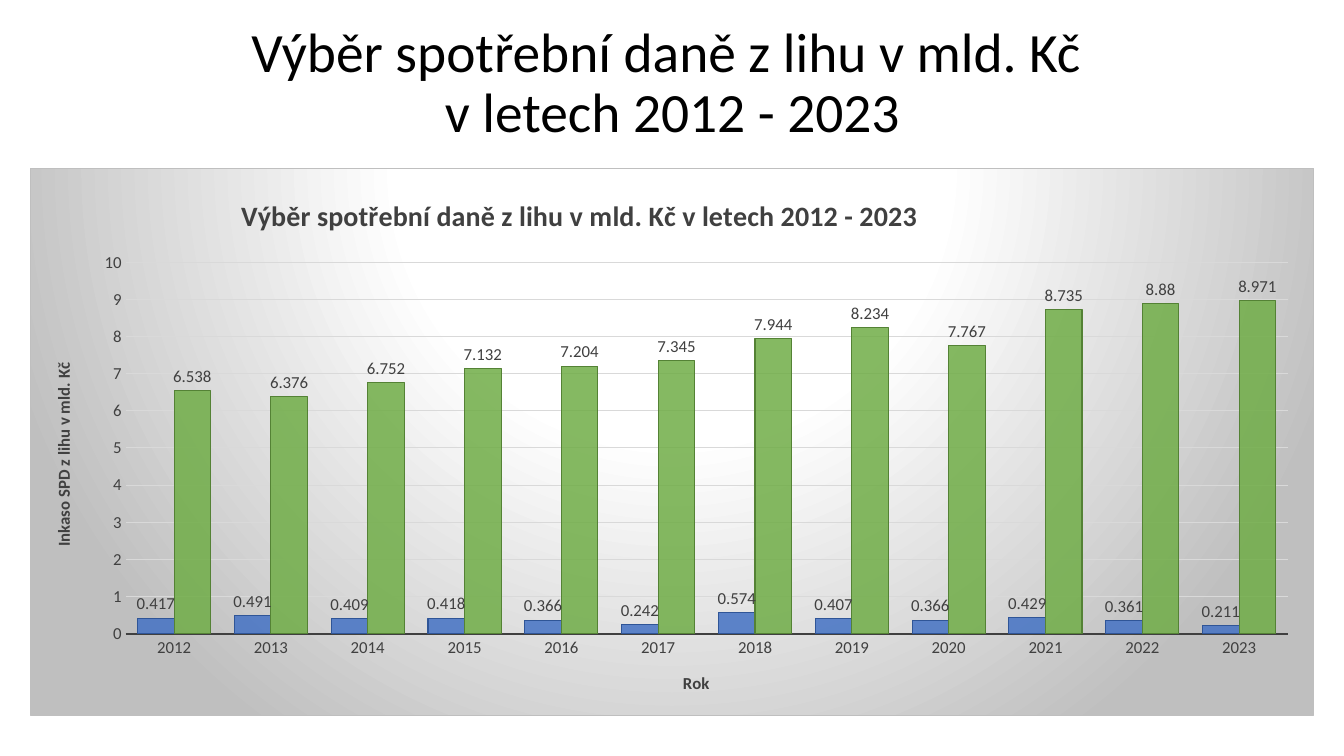
from dataclasses import dataclass

import pptx
import pptx.chart.data
import pptx.dml.color
import pptx.enum.chart
import pptx.enum.text
import pptx.oxml
import pptx.oxml.ns
import pptx.util
from pptx.util import Inches

RGBColor = pptx.dml.color.RGBColor
BLACK = RGBColor(0x00, 0x00, 0x00)
DARK_GRAY = RGBColor(0x40, 0x40, 0x40)
GRID_GRAY = RGBColor(0xD9, 0xD9, 0xD9)
BLUE = RGBColor(0x44, 0x72, 0xC4)
DARK_BLUE = RGBColor(0x2F, 0x55, 0x97)
GREEN = RGBColor(0x70, 0xAD, 0x47)
DARK_GREEN = RGBColor(0x54, 0x82, 0x35)
FONT = "Calibri"
YEARS = [str(year) for year in range(2012, 2024)]
HEADING_LINES = ("Výběr spotřební daně z lihu v mld. Kč ", "v letech 2012 - 2023")

CHART_FRAME = """
<c:spPr %s>
  <a:gradFill rotWithShape="1">
    <a:gsLst>
      <a:gs pos="0"><a:srgbClr val="FFFFFF"/></a:gs>
      <a:gs pos="39000"><a:srgbClr val="FFFFFF"/></a:gs>
      <a:gs pos="100000"><a:srgbClr val="BFBFBF"/></a:gs>
    </a:gsLst>
    <a:path path="circle"><a:fillToRect l="50000" t="-80000" r="50000" b="180000"/></a:path>
  </a:gradFill>
  <a:ln w="9525"><a:solidFill><a:srgbClr val="BFBFBF"/></a:solidFill></a:ln>
</c:spPr>""" % pptx.oxml.ns.nsdecls("c", "a")


@dataclass
class TaxSeries:
    name: str
    values: list[float]
    fill: RGBColor
    outline: RGBColor


TAX_SERIES = [
    TaxSeries("Series 1", [0.417, 0.491, 0.409, 0.418, 0.366, 0.242,
                           0.574, 0.407, 0.366, 0.429, 0.361, 0.211], BLUE, DARK_BLUE),
    TaxSeries("Series 2", [6.538, 6.376, 6.752, 7.132, 7.204, 7.345,
                           7.944, 8.234, 7.767, 8.735, 8.88, 8.971], GREEN, DARK_GREEN),
]


def style_font(font, size: float, color: RGBColor, bold: bool = False) -> None:
    font.name = FONT
    font.size = pptx.util.Pt(size)
    font.color.rgb = color
    font.bold = bold


def style_line(line, color: RGBColor, width: float) -> None:
    line.color.rgb = color
    line.width = pptx.util.Pt(width)


def write_chart_text(title, text: str, size: float) -> None:
    span = title.text_frame.paragraphs[0].add_run()
    span.text = text
    style_font(span.font, size, DARK_GRAY, bold=True)


def set_layout(element, index: int, target: str, **fractions: float) -> None:
    """Place a chart part by fractions of the chart's width and height."""
    for old_layout in element.findall(pptx.oxml.ns.qn("c:layout")):
        element.remove(old_layout)
    modes = '<c:xMode val="edge"/><c:yMode val="edge"/>'
    places = "".join(f'<c:{key} val="{value}"/>' for key, value in fractions.items())
    element.insert(index, pptx.oxml.parse_xml(
        f'<c:layout {pptx.oxml.ns.nsdecls("c")}><c:manualLayout>'
        f"{target}{modes}{places}</c:manualLayout></c:layout>"))


def style_series(series, tax: TaxSeries) -> None:
    series.invert_if_negative = False
    series.format.fill.solid()
    series.format.fill.fore_color.rgb = tax.fill
    for color in series._element.xpath("c:spPr/a:solidFill/a:srgbClr"):
        color.append(pptx.oxml.parse_xml(
            f'<a:alpha {pptx.oxml.ns.nsdecls("a")} val="85000"/>'))
    style_line(series.format.line, tax.outline, 0.75)
    labels = series.data_labels
    labels.show_value = True
    labels.position = pptx.enum.chart.XL_LABEL_POSITION.OUTSIDE_END
    style_font(labels.font, 12, DARK_GRAY)


def style_axis(axis, title: str) -> None:
    axis.major_tick_mark = pptx.enum.chart.XL_TICK_MARK.NONE
    axis.minor_tick_mark = pptx.enum.chart.XL_TICK_MARK.NONE
    style_font(axis.tick_labels.font, 12, DARK_GRAY)
    write_chart_text(axis.axis_title, title, 12)


def add_heading(page) -> None:
    heading = page.shapes.title
    heading.left, heading.top = Inches(0.92), Inches(0.4)
    heading.width, heading.height = Inches(11.5), Inches(0.88)
    frame = heading.text_frame
    frame.vertical_anchor = pptx.enum.text.MSO_ANCHOR.MIDDLE
    para = frame.paragraphs[0]
    para.alignment = pptx.enum.text.PP_ALIGN.CENTER
    para.line_spacing = 0.9
    for number, line in enumerate(HEADING_LINES):
        if number:
            para.add_line_break()
        span = para.add_run()
        span.text = line
        style_font(span.font, 39.6, BLACK)


def add_tax_chart(page) -> None:
    chart_data = pptx.chart.data.CategoryChartData()
    chart_data.categories = YEARS
    for tax in TAX_SERIES:
        chart_data.add_series(tax.name, tax.values)
    chart = page.shapes.add_chart(
        pptx.enum.chart.XL_CHART_TYPE.COLUMN_CLUSTERED,
        Inches(0.3), Inches(1.67), Inches(12.73), Inches(5.43), chart_data).chart
    style_font(chart.font, 10, BLACK)
    chart.has_legend = False
    write_chart_text(chart.chart_title, "".join(HEADING_LINES), 20)
    set_layout(chart.chart_title._element, 1, "", x=0.16, y=0.04)

    plot = chart.plots[0]
    plot.gap_width = 65
    plot.overlap = 0
    plot.vary_by_categories = False
    for series, tax in zip(plot.series, TAX_SERIES):
        style_series(series, tax)

    style_axis(chart.category_axis, "Rok")
    style_line(chart.category_axis.format.line, DARK_GRAY, 1.5)
    value_axis = chart.value_axis
    style_axis(value_axis, "Inkaso SPD z lihu v mld. Kč")
    value_axis.minimum_scale, value_axis.maximum_scale = 0, 10
    value_axis.major_unit = 1
    value_axis.format.line.fill.background()
    style_line(value_axis.major_gridlines.format.line, GRID_GRAY, 0.75)

    chart_element = chart._chartSpace.chart
    set_layout(chart_element.plotArea, 0, '<c:layoutTarget val="inner"/>',
               x=0.074, y=0.171, w=0.906, h=0.68)
    chart_element.addnext(pptx.oxml.parse_xml(CHART_FRAME))


def main() -> None:
    deck = pptx.Presentation()
    deck.slide_width, deck.slide_height = Inches(13.33), Inches(7.5)
    page = deck.slides.add_slide(deck.slide_layouts[5])
    add_heading(page)
    add_tax_chart(page)
    deck.save("out.pptx")


if __name__ == "__main__":
    main()
